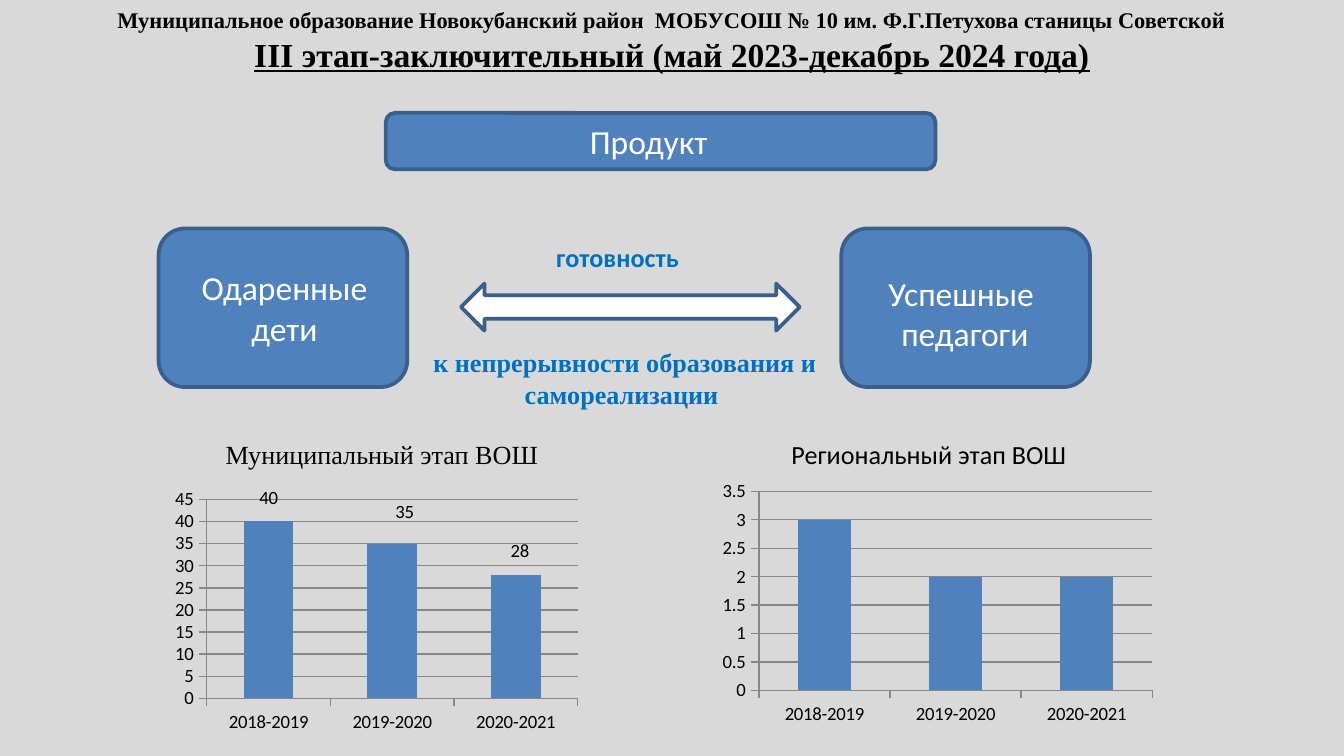
from dataclasses import dataclass

import lxml.etree
import pptx
import pptx.chart.data
import pptx.dml.color
import pptx.enum.chart
import pptx.enum.shapes
import pptx.enum.text
import pptx.oxml.ns
import pptx.util

Inches = pptx.util.Inches
Pt = pptx.util.Pt
RGBColor = pptx.dml.color.RGBColor
Shape = pptx.enum.shapes.MSO_SHAPE
Align = pptx.enum.text.PP_ALIGN
qn = pptx.oxml.ns.qn

BACKGROUND = RGBColor(0xD9, 0xD9, 0xD9)
BLUE = RGBColor(0x4F, 0x81, 0xBD)
OUTLINE = RGBColor(0x3A, 0x5F, 0x8C)
ACCENT = RGBColor(0x00, 0x70, 0xC0)
GRID = RGBColor(0x87, 0x87, 0x87)
WHITE = RGBColor(0xFF, 0xFF, 0xFF)
BLACK = RGBColor(0, 0, 0)

SANS = "Calibri"
SERIF = "Times New Roman"
YEARS = ("2018-2019", "2019-2020", "2020-2021")


@dataclass(frozen=True)
class Box:
    left: float
    top: float
    width: float
    height: float

    def lengths(self) -> tuple:
        return tuple(Inches(v) for v in (self.left, self.top, self.width, self.height))


@dataclass(frozen=True)
class Block:
    box: Box
    preset: Shape
    fill: RGBColor


@dataclass(frozen=True)
class Line:
    text: str
    style: dict


@dataclass(frozen=True)
class Caption:
    box: Box
    lines: tuple
    align: Align = Align.LEFT
    wrap: bool = True


@dataclass(frozen=True)
class StageChart:
    box: Box
    values: tuple
    top_value: float
    step: float
    label_shifts: tuple = ()  # (x, y) of each value label, as shares of the chart


def style(size: float, name: str, color: RGBColor, **extra) -> dict:
    return {"size": Pt(size), "name": name, "color": color, **extra}


def apply_style(font, values: dict) -> None:
    for key, value in values.items():
        if key == "color":
            font.color.rgb = value
        else:
            setattr(font, key, value)


def draw_block(slide, block: Block) -> None:
    shape = slide.shapes.add_shape(block.preset, *block.box.lengths())
    shape.shadow.inherit = False
    shape.fill.solid()
    shape.fill.fore_color.rgb = block.fill
    shape.line.color.rgb = OUTLINE
    shape.line.width = Pt(2)


def draw_caption(slide, caption: Caption) -> None:
    frame = slide.shapes.add_textbox(*caption.box.lengths()).text_frame
    frame.word_wrap = caption.wrap
    for number, line in enumerate(caption.lines):
        paragraph = frame.add_paragraph() if number else frame.paragraphs[0]
        paragraph.alignment = caption.align
        run = paragraph.add_run()
        run.text = line.text
        apply_style(run.font, line.style)


def shift_label(label, x: float, y: float) -> None:
    layout = lxml.etree.Element(qn("c:layout"))
    manual = lxml.etree.SubElement(layout, qn("c:manualLayout"))
    for tag, share in (("c:x", x), ("c:y", y)):
        lxml.etree.SubElement(manual, qn(tag)).set("val", str(share))
    label.find(qn("c:idx")).addnext(layout)


def draw_value_labels(series, shifts: tuple) -> None:
    outside = pptx.enum.chart.XL_LABEL_POSITION.OUTSIDE_END
    series.data_labels.show_value = True
    series.data_labels.position = outside
    for number in range(len(shifts)):
        series.points[number].data_label.position = outside
    labels = series.data_labels._element
    for label, shift in zip(labels.findall(qn("c:dLbl")), shifts):
        shift_label(label, *shift)
    # Without leader lines
    for leader in labels.findall(qn("c:showLeaderLines")):
        leader.set("val", "0")


def draw_chart(slide, stage: StageChart) -> None:
    data = pptx.chart.data.CategoryChartData()
    data.categories = YEARS
    data.add_series("Series 1", stage.values)
    kind = pptx.enum.chart.XL_CHART_TYPE.COLUMN_CLUSTERED
    chart = slide.shapes.add_chart(kind, *stage.box.lengths(), data).chart
    chart.has_title = False
    chart.has_legend = False
    apply_style(chart.font, style(10, SANS, BLACK))

    # Columns
    plot = chart.plots[0]
    plot.gap_width = 150
    plot.vary_by_categories = False
    series = plot.series[0]
    series.format.fill.solid()
    series.format.fill.fore_color.rgb = BLUE
    if stage.label_shifts:
        draw_value_labels(series, stage.label_shifts)

    # Axes and grid
    scale = {"minimum_scale": 0, "maximum_scale": stage.top_value,
             "major_unit": stage.step, "has_major_gridlines": True}
    for key, value in scale.items():
        setattr(chart.value_axis, key, value)
    chart.value_axis.tick_labels.number_format = "General"
    chart.value_axis.tick_labels.number_format_is_linked = False
    for axis in (chart.category_axis, chart.value_axis):
        axis.major_tick_mark = pptx.enum.chart.XL_TICK_MARK.OUTSIDE
    for part in (chart.category_axis, chart.value_axis, chart.value_axis.major_gridlines):
        part.format.line.color.rgb = GRID
        part.format.line.width = Pt(0.75)


HEADING = style(12, SERIF, BLACK, bold=True)
ON_BLUE = style(18, SANS, WHITE)

BLOCKS = (
    *(Block(Box(left, 1.7, 1.85, 1.18), Shape.ROUNDED_RECTANGLE, BLUE) for left in (1.18, 6.26)),
    Block(Box(2.87, 0.84, 4.09, 0.42), Shape.ROUNDED_RECTANGLE, BLUE),
    Block(Box(3.43, 2.11, 2.52, 0.35), Shape.LEFT_RIGHT_ARROW, WHITE),
)

CAPTIONS = (
    Caption(Box(0.12, 0, 9.76, 0.61), (
        Line("Муниципальное образование Новокубанский район  МОБУСОШ № 10 "
             "им. Ф.Г.Петухова станицы Советской", HEADING),
        Line("III этап-заключительный (май 2023-декабрь 2024 года)",
             {**HEADING, "size": Pt(18), "underline": True}),
    ), Align.CENTER),
    Caption(Box(4.29, 0.85, 1.42, 0.4), (Line("Продукт", ON_BLUE),)),
    Caption(Box(1.39, 1.94, 1.51, 0.71),
            (Line("Одаренные ", ON_BLUE), Line("дети ", ON_BLUE)), Align.CENTER, False),
    Caption(Box(6.5, 1.98, 1.36, 0.71),
            (Line("Успешные ", ON_BLUE), Line("педагоги", ON_BLUE)), Align.CENTER, False),
    Caption(Box(4.04, 1.75, 1.65, 0.35),
            (Line("готовность ", style(14, SANS, ACCENT, bold=True)),)),
    Caption(Box(2.62, 2.53, 4.06, 0.57),
            (Line("к непрерывности образования и самореализации ",
                  style(14, SERIF, ACCENT, bold=True)),), Align.CENTER),
    Caption(Box(1.58, 3.21, 3.05, 0.34),
            (Line("Муниципальный этап ВОШ", style(14, SERIF, BLACK)),)),
    Caption(Box(5.79, 3.21, 2.52, 0.34),
            (Line("Региональный этап ВОШ", style(14, SANS, BLACK)),)),
)

CHARTS = (
    StageChart(Box(5.31, 3.54, 3.33, 1.89), (3, 2, 2), 3.5, 0.5),
    StageChart(Box(1.24, 3.6, 3.12, 1.89), (40, 35, 28), 45, 5,
               ((0, -0.03), (0.03, -0.06), (0.01, -0.03))),
)


def main() -> None:
    deck = pptx.Presentation()
    deck.slide_width = Inches(10)
    deck.slide_height = deck.slide_width * 9 // 16
    slide = deck.slides.add_slide(deck.slide_layouts[6])
    slide.background.fill.solid()
    slide.background.fill.fore_color.rgb = BACKGROUND

    for block in BLOCKS:
        draw_block(slide, block)
    for caption in CAPTIONS:
        draw_caption(slide, caption)
    for stage in CHARTS:
        draw_chart(slide, stage)
    deck.save("out.pptx")


if __name__ == "__main__":
    main()
